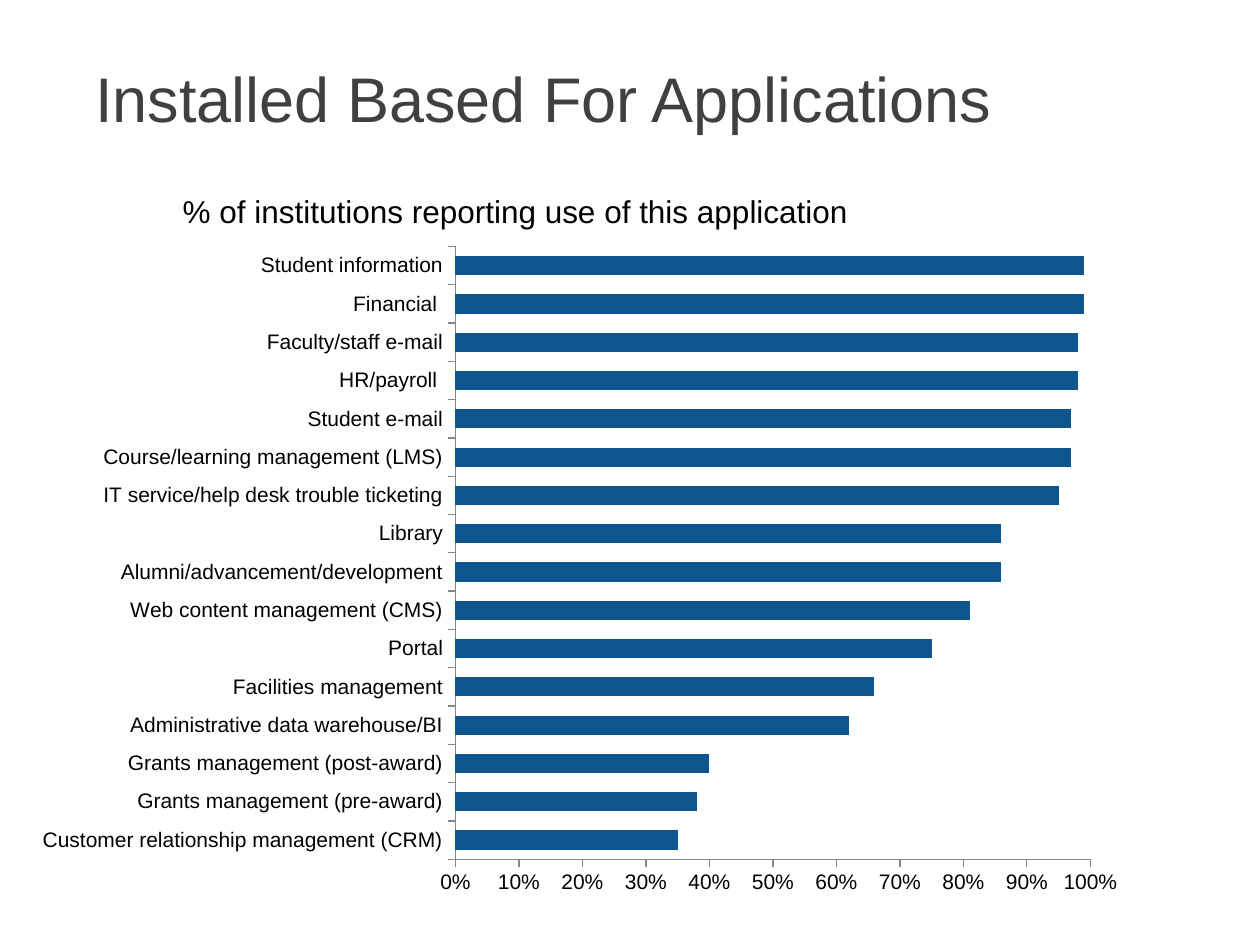
from pptx import Presentation
from pptx.chart.data import CategoryChartData
from pptx.dml.color import RGBColor
from pptx.enum.chart import XL_CHART_TYPE, XL_TICK_MARK
from pptx.enum.text import MSO_ANCHOR
from pptx.oxml import parse_xml
from pptx.oxml.ns import nsdecls
from pptx.util import Pt

BAR = XL_CHART_TYPE.BAR_CLUSTERED
OUTSIDE = XL_TICK_MARK.OUTSIDE
MIDDLE = MSO_ANCHOR.MIDDLE

EMU_PER_PX = 914400 / 126
CHART_TITLE = "% of institutions reporting use of this application"
USAGE = [
    ("Customer relationship management (CRM)", 0.35),
    ("Grants management (pre-award)", 0.38),
    ("Grants management (post-award)", 0.40),
    ("Administrative data warehouse/BI", 0.62),
    ("Facilities management", 0.66),
    ("Portal", 0.75),
    ("Web content management (CMS)", 0.81),
    ("Alumni/advancement/development", 0.86),
    ("Library", 0.86),
    ("IT service/help desk trouble ticketing", 0.95),
    ("Course/learning management (LMS)", 0.97),
    ("Student e-mail", 0.97),
    ("HR/payroll ", 0.98),
    ("Faculty/staff e-mail", 0.98),
    ("Financial ", 0.99),
    ("Student information", 0.99),
]


def px(n):
    return round(n * EMU_PER_PX)


def rgb(code):
    return RGBColor.from_string(code)


def set_font(font, size, color="000000", name="Arial"):
    font.size, font.name, font.bold = Pt(size), name, False
    font.color.rgb = rgb(color)


def add_text(tf, text, **style):
    p = tf.paragraphs[0]
    r = p.add_run()
    r.text = text
    set_font(r.font, **style)


def manual_layout(target=None, **fractions):
    """Chart layout in fractions of the chart size."""
    head = f'<c:layoutTarget val="{target}"/>' if target else ""
    modes = "".join(f'<c:{k}Mode val="edge"/>' for k in "xy")
    values = "".join(f'<c:{k} val="{v}"/>' for k, v in fractions.items())
    return parse_xml(f'<c:layout {nsdecls("c")}><c:manualLayout>{head}{modes}'
                     f'{values}</c:manualLayout></c:layout>')


class Deck:
    TITLE = "404040"
    BAR_FILL = "0D558C"
    AXIS = "868686"

    def __init__(self, width, height):
        self.prs = Presentation()
        self.prs.slide_width, self.prs.slide_height = px(width), px(height)
        self.slide = self.prs.slides.add_slide(self.prs.slide_layouts[6])

    def title(self, text, x, y, w, h):
        box = self.slide.shapes.add_textbox(px(x), px(y), px(w), px(h))
        tf = box.text_frame
        tf.word_wrap = True
        tf.vertical_anchor = MIDDLE
        add_text(tf, text, size=36, color=self.TITLE)

    def style_axis(self, axis):
        axis.has_major_gridlines = False
        axis.major_tick_mark = OUTSIDE
        axis.format.line.color.rgb = rgb(self.AXIS)
        axis.format.line.width = Pt(0.75)
        set_font(axis.tick_labels.font, 12)

    def bar_chart(self, heading, rows, x, y, w, h):
        data = CategoryChartData(number_format="0%")
        data.categories = [name for name, _ in rows]
        data.add_series(heading, [value for _, value in rows])
        chart = self.slide.shapes.add_chart(
            BAR, px(x), px(y), px(w), px(h), data).chart
        set_font(chart.font, 18, name="Calibri")
        chart.has_legend = False

        # Heading
        chart.has_title = True
        title = chart.chart_title
        add_text(title.text_frame, heading, size=18)
        title.include_in_layout = False
        el = title._element
        for old in el.findall("{*}layout"):
            el.remove(old)
        el.find("{*}tx").addnext(manual_layout(x=0.14, y=0.05))

        # Axes
        for axis in (chart.category_axis, chart.value_axis):
            self.style_axis(axis)
        values = chart.value_axis
        values.minimum_scale, values.maximum_scale = 0, 1
        values.major_unit = 0.1
        values.tick_labels.number_format = "0%"
        values.tick_labels.number_format_is_linked = False

        # Bars
        plot = chart.plots[0]
        plot.gap_width = 100
        plot.vary_by_categories = False
        fill = plot.series[0].format.fill
        fill.solid()
        fill.fore_color.rgb = rgb(self.BAR_FILL)

        # Plot area
        area = chart._chartSpace.chart.plotArea
        for old in area.findall("{*}layout"):
            area.remove(old)
        area.insert(0, manual_layout("inner", x=0.39, y=0.13, w=0.57, h=0.8))


def main():
    deck = Deck(1260, 945)
    deck.title("Installed Based For Applications", 83, 47, 1105, 101)
    deck.bar_chart(CHART_TITLE, USAGE, 21, 147, 1114, 766)
    deck.prs.save("out.pptx")


if __name__ == "__main__":
    main()
